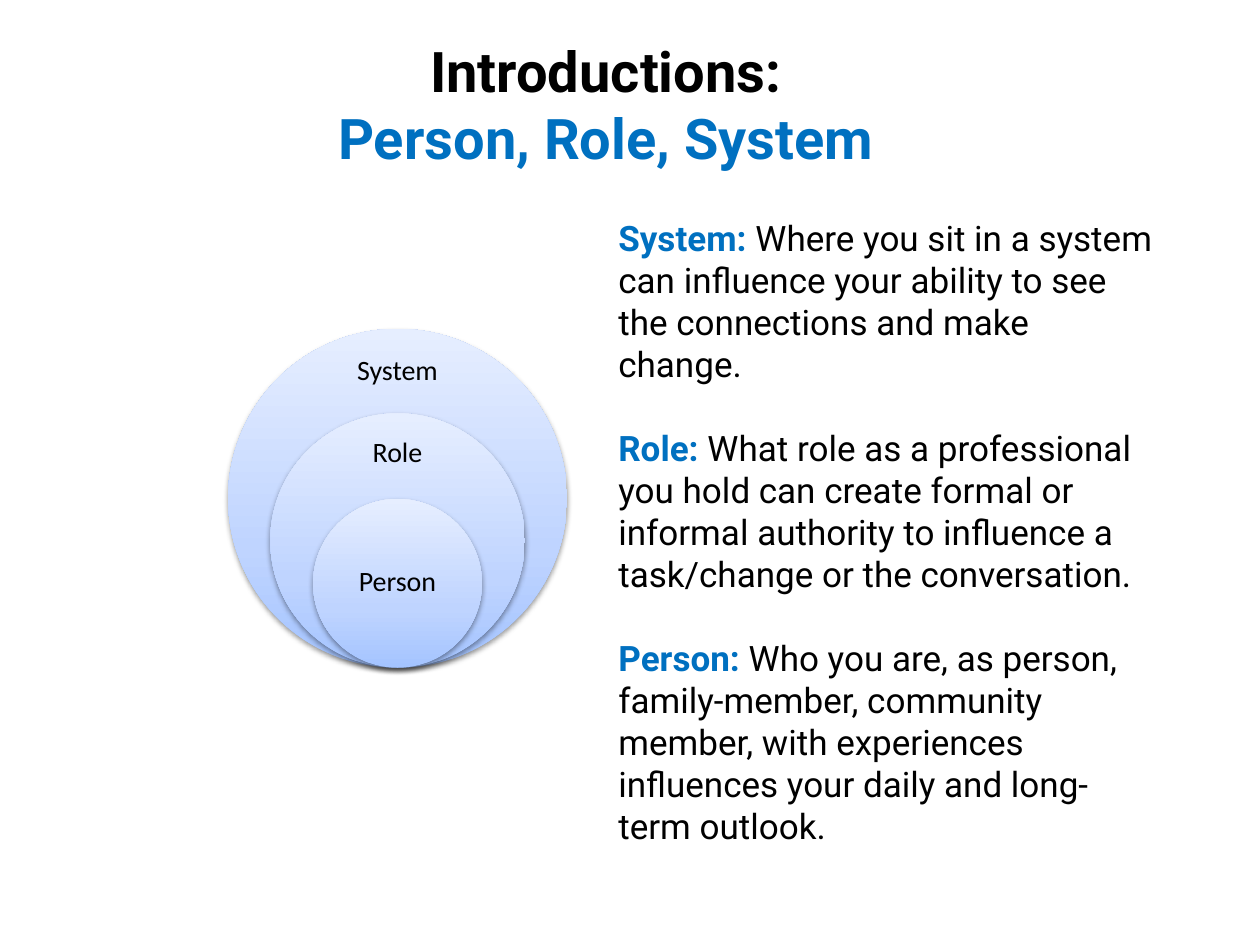
import copy
import lxml.etree
import pptx
import pptx.dml.color
import pptx.enum.shapes
import pptx.enum.text
import pptx.oxml
import pptx.oxml.ns
import pptx.util

Inches = pptx.util.Inches
Pt = pptx.util.Pt
RGBColor = pptx.dml.color.RGBColor
BLACK = RGBColor(0x00, 0x00, 0x00)
BLUE = RGBColor(0x00, 0x70, 0xC0)
GRADIENT = [
    (0, RGBColor(0xA4, 0xC4, 0xFF)),
    (0.35, RGBColor(0xBF, 0xD4, 0xFF)),
    (1, RGBColor(0xE6, 0xEE, 0xFF)),
]
SHADOW = (
    '<a:outerShdw %s blurRad="39370" dist="20320" dir="5400000" rotWithShape="0">'
    '<a:srgbClr val="000000"><a:alpha val="38000"/></a:srgbClr></a:outerShdw>'
    % pptx.oxml.ns.nsdecls("a")
)


def add_run(p, text, color, bold):
    r = p.add_run()
    r.text = text
    r.font.color.rgb = color
    r.font.bold = bold


def style_circle(sp):
    sp.line.fill.background()
    sp.fill.gradient()
    sp.fill.gradient_angle = 90
    first = sp._element.spPr.find(".//" + pptx.oxml.ns.qn("a:gs"))
    first.addnext(copy.deepcopy(first))
    for stop, (position, color) in zip(sp.fill.gradient_stops, GRADIENT):
        stop.position = position
        stop.color.rgb = color
    sp.shadow.inherit = False
    effects = sp._element.spPr.find(pptx.oxml.ns.qn("a:effectLst"))
    effects.append(pptx.oxml.parse_xml(SHADOW))


prs = pptx.Presentation()
prs.slide_width = Inches(10)
prs.slide_height = Inches(7.5)
s = prs.slides.add_slide(prs.slide_layouts[5])

title = s.shapes.title
title.left, title.top = Inches(1.64), Inches(0.17)
title.width, title.height = Inches(6.34), Inches(1.3)
tf = title.text_frame
tf.auto_size = pptx.enum.text.MSO_AUTO_SIZE.NONE
tf.vertical_anchor = pptx.enum.text.MSO_ANCHOR.MIDDLE
p = tf.paragraphs[0]
p.alignment = pptx.enum.text.PP_ALIGN.CENTER
p.font.name = "Roboto"
p.font.size = Pt(32)
add_run(p, "Introductions:", BLACK, True)
p.add_line_break()
add_run(p, "Person, Role, System", BLUE, True)

center, bottom = 3.155, 5.3
circles = [
    ("System", 2.69, 2.75, 0.4),
    ("Role", 2.02, 3.41, 0.38),
    ("Person", 1.34, 4.29, 0.67),
]
for label, size, label_top, label_height in circles:
    sp = s.shapes.add_shape(
        pptx.enum.shapes.MSO_SHAPE.OVAL,
        Inches(center - size / 2), Inches(bottom - size), Inches(size), Inches(size),
    )
    style_circle(sp)
    box = s.shapes.add_textbox(
        Inches(center - 0.47), Inches(label_top), Inches(0.94), Inches(label_height)
    )
    tf = box.text_frame
    tf.word_wrap = True
    tf.vertical_anchor = pptx.enum.text.MSO_ANCHOR.MIDDLE
    tf.margin_left = tf.margin_right = tf.margin_top = tf.margin_bottom = Inches(0.12)
    p = tf.paragraphs[0]
    p.text = label
    p.alignment = pptx.enum.text.PP_ALIGN.CENTER
    p.line_spacing = 0.9
    p.font.name = "Calibri"
    p.font.size = Pt(16)
    p.font.color.rgb = BLACK

definitions = [
    ("System: ", "Where you sit in a system can influence your ability to see "
     "the connections and make change."),
    ("Role: ", "What role as a professional you hold can create formal or informal "
     "authority to influence a task/change or the conversation."),
    ("Person: ", "Who you are, as person, family-member, community member, with "
     "experiences influences your daily and long-term outlook."),
]
box = s.shapes.add_textbox(Inches(4.81), Inches(1.67), Inches(4.44), Inches(5.15))
tf = box.text_frame
tf.word_wrap = True
for i, (term, meaning) in enumerate(definitions):
    p = tf.add_paragraph() if i else tf.paragraphs[0]
    p.space_before = Pt(24 if i else 0)
    p.font.name = "Roboto"
    p.font.size = Pt(20)
    add_run(p, term, BLUE, True)
    add_run(p, meaning, BLACK, False)

prs.save("out.pptx")
